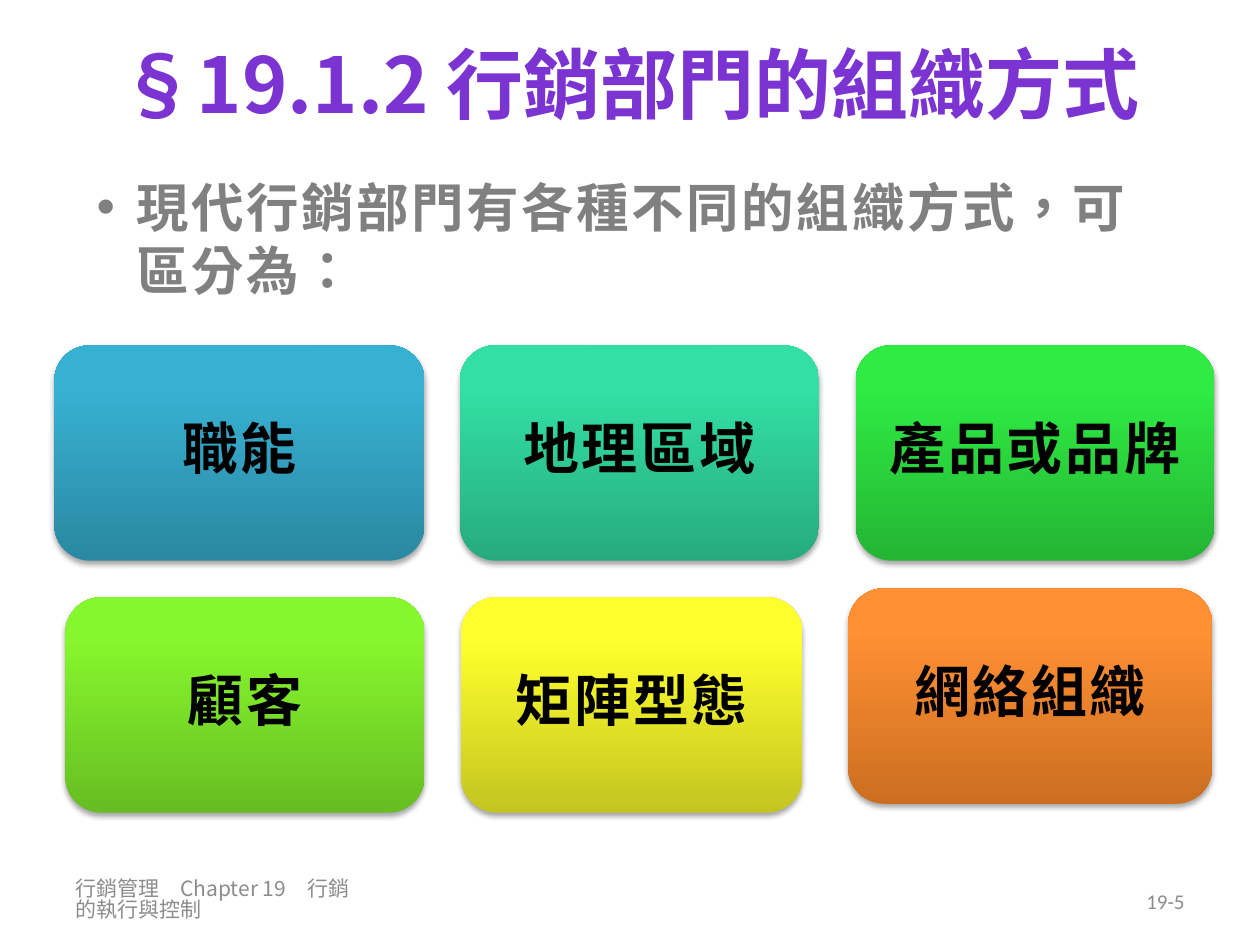
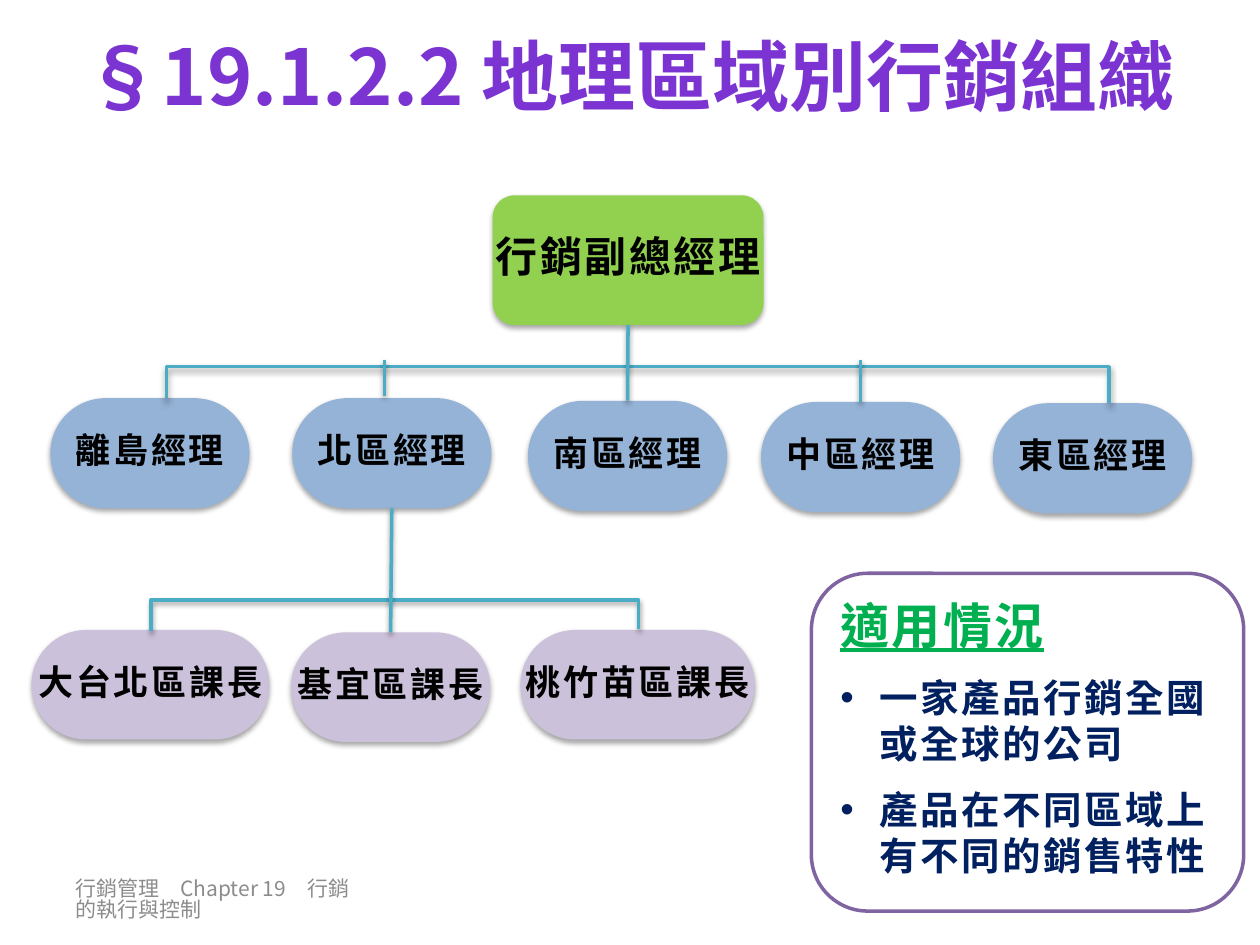
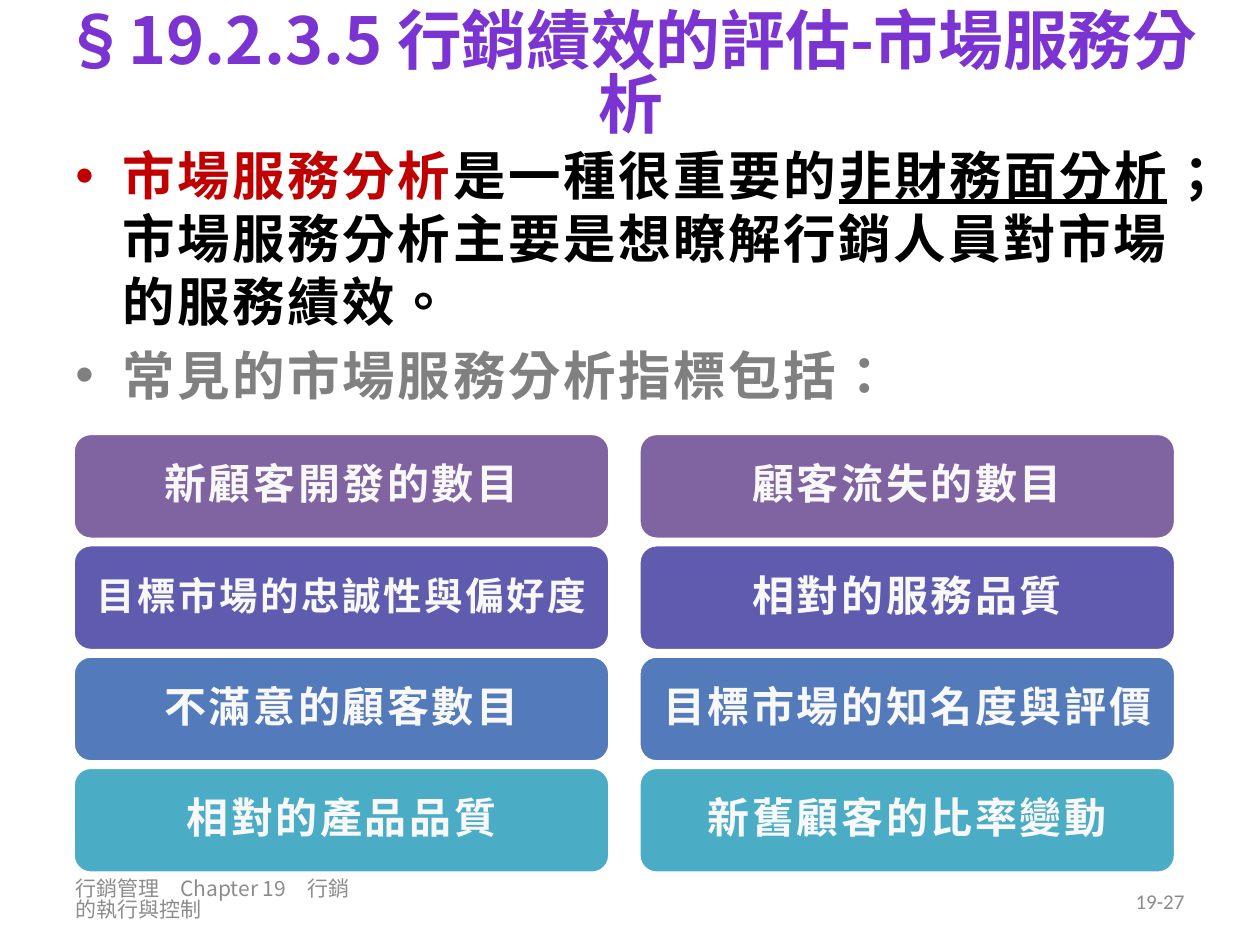
from lxml import etree
from pptx import Presentation
from pptx.dml.color import RGBColor
from pptx.enum.lang import MSO_LANGUAGE_ID
from pptx.enum.shapes import MSO_CONNECTOR, MSO_SHAPE
from pptx.enum.text import MSO_ANCHOR, PP_ALIGN
from pptx.oxml.ns import qn
from pptx.util import Pt

LEFT, CENTER, RIGHT = PP_ALIGN.LEFT, PP_ALIGN.CENTER, PP_ALIGN.RIGHT
TOP, MIDDLE = MSO_ANCHOR.TOP, MSO_ANCHOR.MIDDLE
STRAIGHT, ELBOW = MSO_CONNECTOR.STRAIGHT, MSO_CONNECTOR.ELBOW
ROUNDED = MSO_SHAPE.ROUNDED_RECTANGLE
CHINESE = MSO_LANGUAGE_ID.TRADITIONAL_CHINESE
SIDE_TOP, SIDE_BOTTOM = 0, 2

CJK, LATIN = "Noto Sans CJK SC", "Calibri"
CJK_SPACING = 0.82
TRACKING = 1.5

BLACK = RGBColor(0x00, 0x00, 0x00)
WHITE = RGBColor(0xFF, 0xFF, 0xFF)
OFF_WHITE = RGBColor(0xF8, 0xF8, 0xF8)
TITLE_PURPLE = RGBColor(0x7B, 0x34, 0xD2)
FOOTER_GRAY = RGBColor(0x8C, 0x8C, 0x8C)
BODY_GRAY = RGBColor(0x80, 0x80, 0x80)
RED = RGBColor(0xC0, 0x00, 0x00)
GREEN = RGBColor(0x00, 0xB0, 0x50)
NAVY = RGBColor(0x00, 0x20, 0x60)
LIME = RGBColor(0x92, 0xD0, 0x50)
SOFT_BLUE = RGBColor(0x95, 0xB3, 0xD7)
LAVENDER = RGBColor(0xCC, 0xC1, 0xDA)
TEAL = RGBColor(0x4B, 0xAC, 0xC6)
VIOLET = RGBColor(0x80, 0x64, 0xA2)
INDIGO = RGBColor(0x5F, 0x5B, 0xAE)
BLUE = RGBColor(0x53, 0x7A, 0xBA)

# Text, left, top, width, dark bottom colour, light top colour
ORGANISATION_CARDS = [
    ("職能", 31, 197.3, 211.7, RGBColor(0x2A, 0x88, 0xA2), RGBColor(0x37, 0xB1, 0xD2)),
    ("地理區域", 262.8, 197.3, 205.2, RGBColor(0x27, 0xAB, 0x7E), RGBColor(0x32, 0xDF, 0xA4)),
    ("產品或品牌", 488.9, 197.3, 205.2, RGBColor(0x24, 0xB5, 0x34), RGBColor(0x2F, 0xEB, 0x43)),
    ("顧客", 37.4, 341.3, 205.2, RGBColor(0x67, 0xBD, 0x22), RGBColor(0x86, 0xF6, 0x2D)),
    ("矩陣型態", 263.5, 341.3, 195.1, RGBColor(0xC4, 0xC5, 0x21), RGBColor(0xFE, 0xFF, 0x2C)),
    ("網絡組織", 484.6, 336.2, 208.1, RGBColor(0xCC, 0x6E, 0x20), RGBColor(0xFF, 0x90, 0x34)),
]
# Text, left, top
MANAGERS = [
    ("離島經理", 28.8, 227.5), ("北區經理", 167, 227.5), ("南區經理", 301.7, 229),
    ("中區經理", 434.9, 229.7), ("東區經理", 567.4, 230.4),
]
# Text, left, top, width
SECTION_CHIEFS = [
    ("大台北區課長", 18, 360, 136), ("基宜區課長", 166.3, 361.4, 113.8),
    ("桃竹苗區課長", 297.4, 360, 133.9),
]
INDICATOR_COLORS = [VIOLET, INDIGO, BLUE, TEAL]
# Text and size for each row of both columns
INDICATOR_COLUMNS = [
    [("新顧客開發的數目", 24), ("目標市場的忠誠性與偏好度", 22),
     ("不滿意的顧客數目", 24), ("相對的產品品質", 24)],
    [("顧客流失的數目", 24), ("相對的服務品質", 24),
     ("目標市場的知名度與評價", 24), ("新舊顧客的比率變動", 24)],
]


def points(*lengths):
    return [Pt(length) for length in lengths]


def add_run(paragraph, text, size=24, color=BLACK, font=LATIN, bold=True,
            underline=False, tracking=TRACKING):
    run = paragraph.add_run()
    run.text = text
    run.font.size = Pt(size)
    run.font.bold = bold
    run.font.underline = underline
    run.font.color.rgb = color
    run.font.language_id = CHINESE
    run.font.name = font
    properties = run.font._element
    properties.set("spc", str(int(tracking * 100)))
    east_asian = etree.Element(qn("a:ea"), typeface=font)
    properties.find(qn("a:latin")).addnext(east_asian)


def write(frame, text, align=LEFT, spacing=None, before=0, indent=0, **style):
    """Write one paragraph; text is a string or a list of (text, style) runs."""
    first = not frame.paragraphs[0].runs
    paragraph = frame.paragraphs[0] if first else frame.add_paragraph()
    paragraph.alignment = align
    if spacing:
        paragraph.line_spacing = spacing
    if not first:
        paragraph.space_before = Pt(before)
    if indent:
        properties = paragraph._p.get_or_add_pPr()
        properties.set("marL", str(Pt(indent)))
        properties.set("indent", str(-Pt(indent)))
        etree.SubElement(properties, qn("a:buFont"), typeface="Arial")
        etree.SubElement(properties, qn("a:buChar"), char="•")
    runs = [(text, {})] if isinstance(text, str) else text
    for run_text, run_style in runs:
        add_run(paragraph, run_text, **{**style, **run_style})


def add_text_box(slide, box, anchor=TOP):
    frame = slide.shapes.add_textbox(*points(*box)).text_frame
    frame.word_wrap = True
    frame.vertical_anchor = anchor
    return frame


def add_shadow(effect_list, opacity, distance):
    shadow = etree.SubElement(
        effect_list, qn("a:outerShdw"), blurRad=str(Pt(3.1)),
        dist=str(Pt(distance)), dir="5400000", rotWithShape="0")
    color = etree.SubElement(shadow, qn("a:srgbClr"), val=str(BLACK))
    etree.SubElement(color, qn("a:alpha"), val=str(opacity * 1000))


def add_card(slide, box, fill=None, line=None, shadow=True, rounding=None,
             wrap=True, inset=3.6, anchor=MIDDLE):
    shape = slide.shapes.add_shape(ROUNDED, *points(*box))
    shape.shadow.inherit = False
    if rounding:
        shape.adjustments[0] = rounding
    if fill:
        shape.fill.solid()
        shape.fill.fore_color.rgb = fill
    if line:
        shape.line.color.rgb = line
        shape.line.width = Pt(2)
    else:
        shape.line.fill.background()
    if shadow:
        add_shadow(shape._element.spPr.find(qn("a:effectLst")), 35, 1.8)
    frame = shape.text_frame
    frame.word_wrap = wrap
    frame.vertical_anchor = anchor
    frame.margin_left = frame.margin_right = Pt(inset)
    return shape


def add_line(slide, kind, start, end):
    connector = slide.shapes.add_connector(kind, *points(*start, *end))
    connector.line.color.rgb = TEAL
    connector.line.width = Pt(2)
    effects = etree.SubElement(connector._element.spPr, qn("a:effectLst"))
    add_shadow(effects, 38, 1.6)
    return connector


def add_bracket(slide, start, end, bar_top):
    """Elbow line that rises from start to bar_top and drops to end."""
    (left, start_top), (right, end_top) = start, end
    span, drop = right - left, end_top - start_top
    connector = add_line(slide, ELBOW, start, end)
    connector.width, connector.height = points(abs(drop), span)
    connector.left = Pt((left + right - abs(drop)) / 2)
    connector.top = Pt((start_top + end_top - span) / 2)
    properties = connector._element.spPr
    transform = properties.find(qn("a:xfrm"))
    transform.set("rot", str((270 if drop >= 0 else 90) * 60000))
    transform.set("flipH", "1")
    transform.set("flipV", "0" if drop >= 0 else "1")
    geometry = properties.find(qn("a:prstGeom"))
    guides = geometry.find(qn("a:avLst"))
    if guides is None:
        guides = etree.SubElement(geometry, qn("a:avLst"))
    bend = round((bar_top - start_top) / drop * 100000)
    etree.SubElement(guides, qn("a:gd"), name="adj1", fmla=f"val {bend}")


def add_base_slide(presentation, title, box, title_size=44, number=None):
    """Blank slide with title, footer and page number."""
    slide = presentation.slides.add_slide(presentation.slide_layouts[6])
    write(add_text_box(slide, box, MIDDLE), title, align=CENTER,
          spacing=CJK_SPACING, size=title_size, color=TITLE_PURPLE, font=CJK,
          tracking=0)
    small = {"size": 12, "color": FOOTER_GRAY, "bold": False, "tracking": 0}
    write(add_text_box(slide, (36, 500.4, 176.4, 28.8), MIDDLE),
          "行銷管理　Chapter 19　行銷的執行與控制", spacing=CJK_SPACING, font=CJK, **small)
    if number:
        write(add_text_box(slide, (516.2, 500.4, 167.8, 28.8), MIDDLE),
              number, align=RIGHT, **small)
    return slide


def build_organisation_types(presentation):
    slide = add_base_slide(presentation, "§19.1.2 行銷部門的組織方式",
                           (36, 9.4, 648, 85), number="19-5")
    # Gradient cards
    for text, left, top, width, dark, light in ORGANISATION_CARDS:
        card = add_card(slide, (left, top, width, 123.1))
        card.fill.gradient()
        card.fill.gradient_angle = 90
        bottom_stop, top_stop = card.fill.gradient_stops
        bottom_stop.color.rgb, bottom_stop.position = dark, 0
        top_stop.color.rgb, top_stop.position = light, 0.8
        write(card.text_frame, text, align=CENTER, spacing=CJK_SPACING,
              size=32, font=CJK)
    # Introduction
    write(add_text_box(slide, (48.2, 96.5, 629.3, 79.9)),
          "現代行銷部門有各種不同的組織方式，可區分為：",
          indent=22.5, size=30, color=BODY_GRAY)


def add_position(slide, text, box, fill, size=20, rounding=0.5):
    card = add_card(slide, box, fill, rounding=rounding, wrap=False)
    write(card.text_frame, text, align=CENTER, spacing=CJK_SPACING,
          size=size, font=CJK)
    return card


def add_situation_panel(slide, box):
    panel = add_card(slide, box, WHITE, line=VIOLET, shadow=False, inset=7.2,
                     anchor=TOP)
    frame = panel.text_frame
    write(frame, "適用情況", size=28, color=GREEN, underline=True)
    for text in ("一家產品行銷全國或全球的公司", "產品在不同區域上有不同的銷售特性"):
        write(frame, text, before=11, indent=22.5, size=22, color=NAVY)


def build_regional_organisation(presentation):
    slide = add_base_slide(presentation, "§19.1.2.2 地理區域別行銷組織",
                           (36, 0, 648, 94.3))
    # Positions
    director = add_position(slide, "行銷副總經理", (281.5, 111.6, 154.8, 74.2),
                            LIME, size=24, rounding=0.17)
    managers = [add_position(slide, text, (left, top, 113.8, 63), SOFT_BLUE)
                for text, left, top in MANAGERS]
    chiefs = [add_position(slide, text, (left, top, width, 62.6), LAVENDER)
              for text, left, top, width in SECTION_CHIEFS]
    north, south, central = managers[1:4]
    # Lines from director to managers, and from the north to its sections
    add_bracket(slide, (95, 227.5), (633.6, 230.4), 209.5)
    add_line(slide, STRAIGHT, (219.6, 205.9), (219.6, 226.1))
    add_line(slide, STRAIGHT, (491.8, 205.9), (491.8, 229.7)).end_connect(
        central, SIDE_TOP)
    add_bracket(slide, (86.4, 360.7), (365, 359.3), 342.7)
    for upper, lower in ((director, south), (north, chiefs[1])):
        connector = add_line(slide, STRAIGHT, (0, 0), (0, 0))
        connector.begin_connect(upper, SIDE_BOTTOM)
        connector.end_connect(lower, SIDE_TOP)
    add_situation_panel(slide, (463.7, 327.6, 247, 193))


def add_indicator_grid(slide, left, top):
    for column, indicators in enumerate(INDICATOR_COLUMNS):
        for row, (text, size) in enumerate(indicators):
            box = (left + column * 323.3, top + row * 63.6, 306.7, 60.5)
            card = add_card(slide, box, INDICATOR_COLORS[row], line=WHITE,
                            shadow=False)
            write(card.text_frame, text, align=CENTER, spacing=0.9, size=size,
                  color=OFF_WHITE)


def build_service_analysis(presentation):
    slide = add_base_slide(presentation, "§19.2.3.5 行銷績效的評估-市場服務分析",
                           (14.4, 0, 692, 88.6), title_size=37, number="19-27")
    # Explanation
    body = add_text_box(slide, (36, 78.5, 648, 202))
    write(body, [
        ("市場服務分析", {"color": RED}),
        ("是一種很重要的", {}),
        ("非財務面分析", {"underline": True}),
        ("；市場服務分析主要是想瞭解行銷人員對市場的服務績效。", {}),
    ], indent=27, size=30)
    write(body, "常見的市場服務分析指標包括：", before=6, indent=27, size=30,
          color=BODY_GRAY)
    add_indicator_grid(slide, 41.8, 247.7)


def main():
    presentation = Presentation()
    presentation.slide_width, presentation.slide_height = points(720, 540)
    build_organisation_types(presentation)
    build_regional_organisation(presentation)
    build_service_analysis(presentation)
    presentation.save("out.pptx")


if __name__ == "__main__":
    main()
